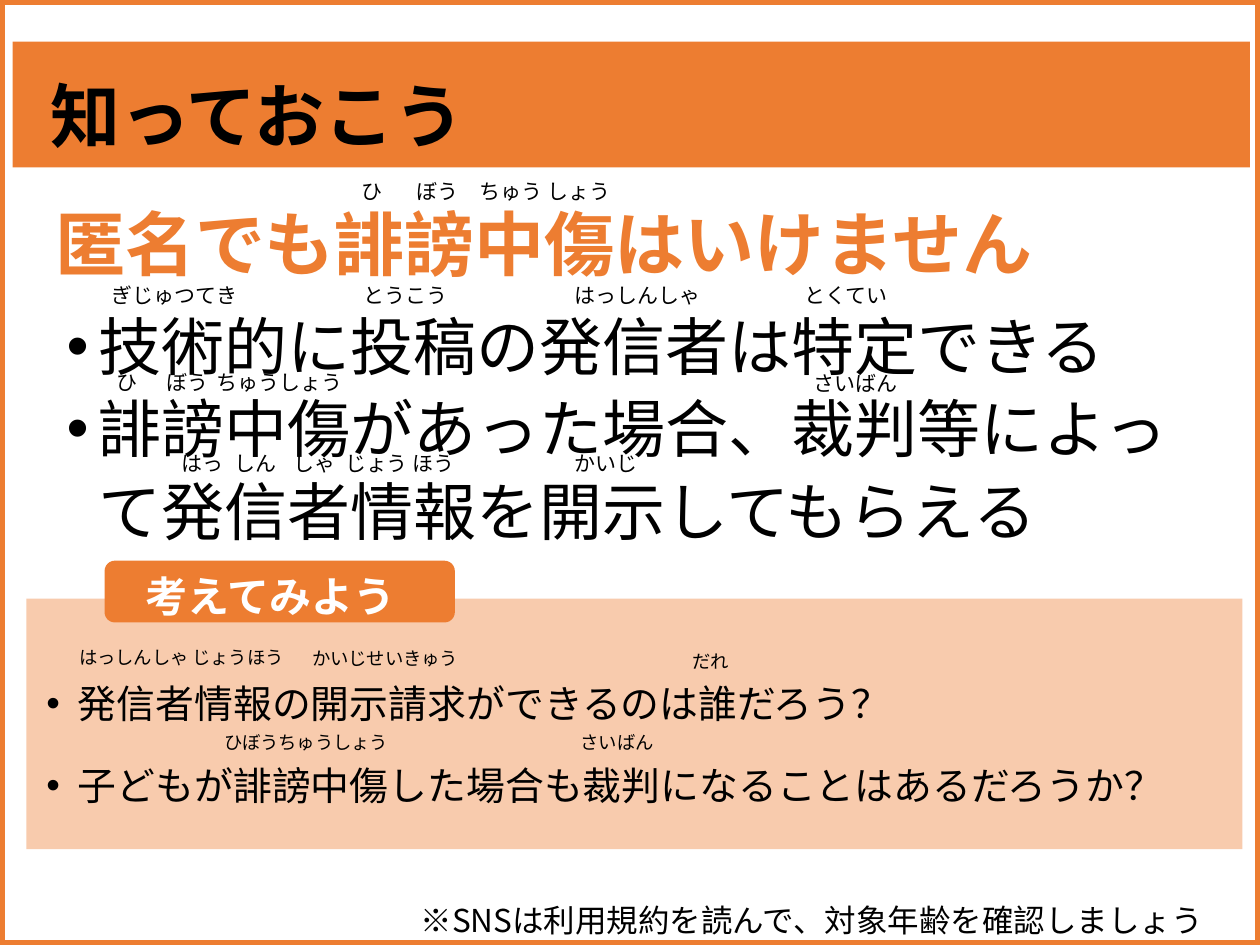
import pptx
import pptx.util
import pptx.dml.color
import pptx.enum.shapes
import pptx.enum.text
import pptx.oxml.ns
import lxml.etree

Inches, Pt = pptx.util.Inches, pptx.util.Pt
RGBColor = pptx.dml.color.RGBColor
SHAPE = pptx.enum.shapes.MSO_SHAPE
MIDDLE = pptx.enum.text.MSO_ANCHOR.MIDDLE
qn = pptx.oxml.ns.qn

ORANGE = RGBColor(0xED, 0x7D, 0x31)
PEACH = RGBColor(0xF8, 0xCB, 0xAD)
BLACK = RGBColor(0, 0, 0)
WHITE = RGBColor(255, 255, 255)
CJK_FONT = "Noto Sans CJK JP"

presentation = pptx.Presentation()
presentation.slide_width, presentation.slide_height = Inches(10), Inches(7.5)
slide = presentation.slides.add_slide(presentation.slide_layouts[6])


def add_panel(kind, box, fill=None):
    panel = slide.shapes.add_shape(kind, *map(Inches, box))
    panel.shadow.inherit = False
    if fill is None:
        panel.fill.background()
        panel.line.color.rgb = ORANGE
        panel.line.width = Pt(6)
    else:
        panel.fill.solid()
        panel.fill.fore_color.rgb = fill
        panel.line.fill.background()


def add_text(box, lines, size, color=BLACK, bold=False, latin="Lato",
             spacing=None, bullet=False, anchor=None, tabs=()):
    """Add a text box; tabs are tab stops in inches from the text's left edge."""
    frame = slide.shapes.add_textbox(*map(Inches, box)).text_frame
    frame.word_wrap = True
    if anchor is not None:
        frame.vertical_anchor = anchor
    for index, line in enumerate(lines):
        paragraph = frame.paragraphs[0] if index == 0 else frame.add_paragraph()
        if spacing is not None:
            paragraph.line_spacing = spacing
        properties = paragraph._p.get_or_add_pPr()
        if bullet:
            properties.set("marL", str(Inches(0.25)))
            properties.set("indent", str(-Inches(0.25)))
            lxml.etree.SubElement(properties, qn("a:buFont"), typeface="Arial")
            lxml.etree.SubElement(properties, qn("a:buChar"), char="•")
        if tabs:
            stops = lxml.etree.SubElement(properties, qn("a:tabLst"))
            for stop in tabs:
                lxml.etree.SubElement(stops, qn("a:tab"), pos=str(Inches(stop)), algn="l")
        run = paragraph.add_run()
        run.text = line
        run.font.size = Pt(size)
        run.font.bold = bold
        run.font.name = latin
        run.font.color.rgb = color
        lxml.etree.SubElement(run.font._element, qn("a:ea"), typeface=CJK_FONT)


# Frame, title band and question panel
add_panel(SHAPE.RECTANGLE, (0, 0, 10, 7.5))
add_panel(SHAPE.RECTANGLE, (0.1, 0.33, 9.82, 1), ORANGE)
add_panel(SHAPE.RECTANGLE, (0.21, 4.75, 9.65, 1.99), PEACH)

# Main message
add_text((0.43, 2.34, 9.21, 2.54),
         ["技術的に投稿の発信者は特定できる",
          "誹謗中傷があった場合、裁判等によって発信者情報を開示してもらえる"],
         36, spacing=Pt(47), bullet=True)
add_text((0.34, 1.31, 9.3, 1.31), ["匿名でも誹謗中傷はいけません"],
         40, ORANGE, bold=True, spacing=0.9, anchor=MIDDLE)

# Questions
add_panel(SHAPE.ROUNDED_RECTANGLE, (0.83, 4.45, 2.78, 0.49), ORANGE)
add_text((1.06, 4.48, 2.6, 0.71), ["考えてみよう"], 24, WHITE, bold=True)
add_text((0.27, 5.06, 9.59, 1.48),
         ["発信者情報の開示請求ができるのは誰だろう？",
          "子どもが誹謗中傷した場合も裁判になることはあるだろうか？"],
         22.2, spacing=Pt(47), bullet=True)

# Readings above the main message: left, top, width, text, tab stops
message_readings = [
    (2.77, 1.37, 2.24, "ひ\tぼう\tちゅう しょう", (0.44, 0.94)),
    (0.79, 2.19, 6.6, "ぎじゅつてき\tとうこう\tはっしんしゃ\tとくてい", (2, 3.67, 5.5)),
    (6.36, 2.89, 1, "さいばん", ()),
    (4.46, 3.53, 1.4, "かいじ", ()),
    (1.34, 3.53, 2.78, "はっ\tしん\tしゃ\tじょう ほう", (0.42, 0.89, 1.3)),
    (0.83, 2.88, 2.37, "ひ\tぼう\tちゅうしょう", (0.39, 0.79)),
]
for left, top, width, reading, tabs in message_readings:
    add_text((left, top, width, 0.3), [reading], 12, tabs=tabs)

# Readings above the questions: left, top, width, text
question_readings = [
    (1.43, 5.08, 0.97, "じょうほう"),
    (2.38, 5.09, 1.38, "かいじせいきゅう"),
    (5.4, 5.11, 0.5, "だれ"),
    (1.68, 5.75, 1.53, "ひぼうちゅうしょう"),
    (4.51, 5.75, 1, "さいばん"),
    (0.53, 5.08, 1.09, "はっしんしゃ"),
]
for left, top, width, reading in question_readings:
    add_text((left, top, width, 0.28), [reading], 10.5)

# Footnote and title
add_text((3.24, 7.1, 6.74, 0.4), ["※SNSは利用規約を読んで、対象年齢を確認しましょう"],
         18, latin=CJK_FONT)
add_text((0.3, 0.52, 8.7, 0.86), ["知っておこう"], 40, bold=True,
         latin=CJK_FONT, spacing=0.9, anchor=MIDDLE)

presentation.save("out.pptx")
